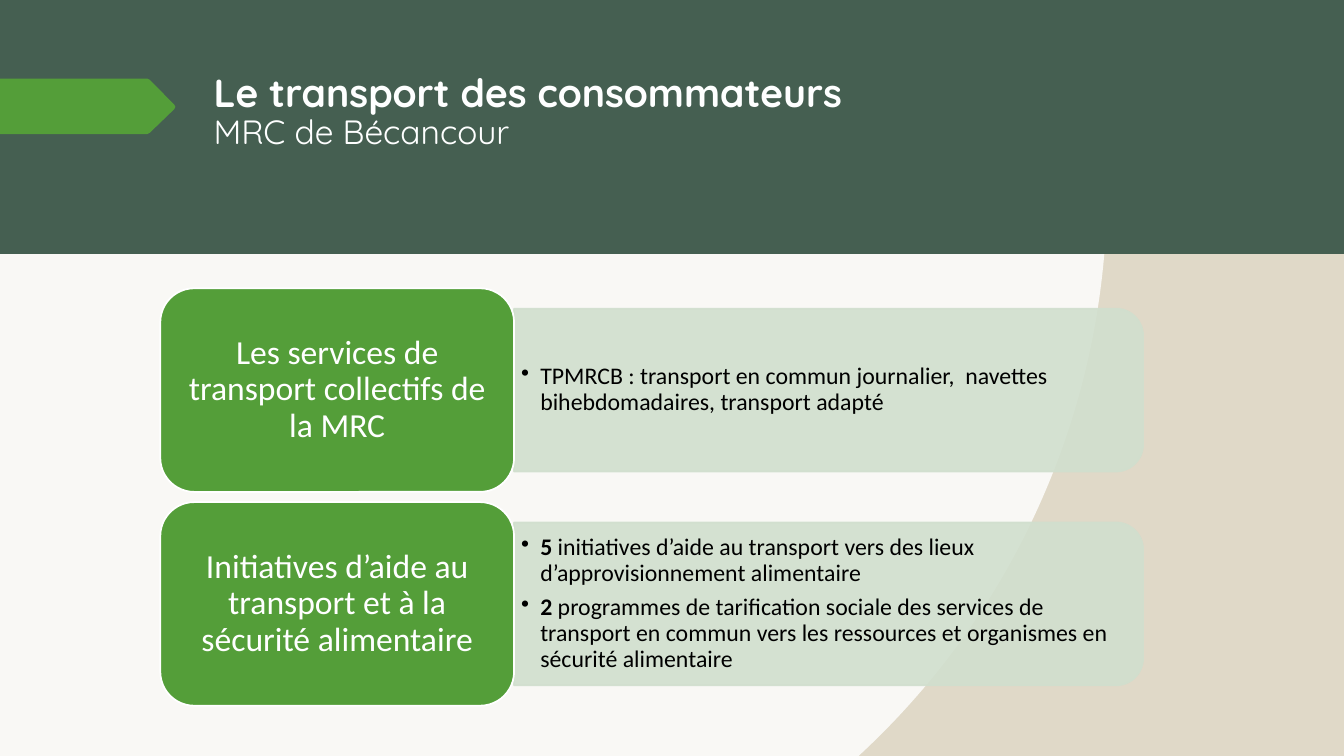
from dataclasses import dataclass

from pptx import Presentation
from pptx.dml.color import RGBColor
from pptx.enum.shapes import MSO_SHAPE
from pptx.enum.text import MSO_ANCHOR, PP_ALIGN
from pptx.oxml import parse_xml
from pptx.oxml.ns import nsdecls, qn
from pptx.oxml.xmlchemy import OxmlElement
from pptx.shapes.base import BaseShape
from pptx.slide import Slide
from pptx.text.text import TextFrame, _Paragraph, _Run
from pptx.util import Emu, Inches, Pt

COLORS = {
    "cream": "F9F8F5",
    "sand": "E0D9C8",
    "banner": "455F51",
    "green": "549E39",
    "panel": "D1DFCE",
    "title": "FEFFFF",
    "white": "FFFFFF",
    "black": "000000",
}

SLIDE_W, SLIDE_H = Inches(13.333), Inches(7.5)

# Rows: a label column and a panel column sharing the width
GRID_LEFT, GRID_TOP = Inches(1.59), Inches(2.86)
GRID_W = Inches(9.75)
LABEL_W = Emu(int(GRID_W * 0.36))
PANEL_W = Emu(GRID_W - LABEL_W)
ROW_H = Inches(2.02)
ROW_PITCH = Emu(int(ROW_H * 1.05))
PANEL_H = Emu(int(ROW_H * 0.8))

# Shares of the marker's own width and height
MARKER_OUTLINE = [
    (0, 0), (0.84, 0), (0.853, 0.02), (0.994, 0.47), (1, 0.51),
    (0.994, 0.55), (0.853, 0.98), (0.84, 1), (0, 1),
]


@dataclass
class Bullet:
    text: str
    lead: str = ""


@dataclass
class Row:
    label: str
    bullets: list[Bullet]


ROWS = [
    Row(
        "Les services de transport collectifs de la MRC",
        [Bullet("TPMRCB : transport en commun journalier,  navettes "
                "bihebdomadaires, transport adapté")],
    ),
    Row(
        "Initiatives d’aide au transport et à la sécurité alimentaire",
        [
            Bullet(" initiatives d’aide au transport vers des lieux "
                   "d’approvisionnement alimentaire", lead="5"),
            Bullet(" programmes de tarification sociale des services de transport "
                   "en commun vers les ressources et organismes en sécurité "
                   "alimentaire", lead="2"),
        ],
    ),
]


def rgb(name: str) -> RGBColor:
    return RGBColor.from_string(COLORS[name])


def set_background(slide: Slide) -> None:
    """Cream disc centred on the upper left quarter, sand around it."""
    bg = parse_xml(
        f'<p:bg {nsdecls("p", "a")}><p:bgPr><a:gradFill rotWithShape="1"><a:gsLst>'
        f'<a:gs pos="100000"><a:srgbClr val="{COLORS["cream"]}"/></a:gs>'
        f'<a:gs pos="100000"><a:srgbClr val="{COLORS["sand"]}"/></a:gs>'
        '</a:gsLst><a:path path="circle">'
        '<a:fillToRect l="50000" t="50000" r="100000" b="100000"/>'
        '</a:path></a:gradFill><a:effectLst/></p:bgPr></p:bg>'
    )
    slide.element.cSld.insert(0, bg)


def paint(sp: BaseShape, fill: str, line: str = "", opacity: int = 100) -> None:
    sp.shadow.inherit = False
    sp.fill.solid()
    sp.fill.fore_color.rgb = rgb(fill)
    if line:
        sp.line.color.rgb = rgb(line)
        sp.line.width = Pt(1.25)
    else:
        sp.line.fill.background()
    if opacity < 100:
        for color in sp.element.spPr.iter(qn("a:srgbClr")):
            alpha = OxmlElement("a:alpha")
            alpha.set("val", str(opacity * 1000))
            color.append(alpha)


def style(r: _Run, size: float, font: str, color: str, bold: bool = False) -> None:
    r.font.size = Pt(size)
    r.font.name = font
    r.font.color.rgb = rgb(color)
    r.font.bold = bold


def set_bullet(p: _Paragraph) -> None:
    pPr = p._p.get_or_add_pPr()
    pPr.set("marL", str(Inches(0.19)))
    pPr.set("indent", str(Inches(-0.19)))
    bullet = OxmlElement("a:buChar")
    bullet.set("char", "•")
    pPr.append(bullet)


def add_banner(slide: Slide) -> None:
    sp = slide.shapes.add_shape(
        MSO_SHAPE.RECTANGLE, 0, 0, SLIDE_W, int(SLIDE_H * 0.336))
    paint(sp, "banner")


def add_title(slide: Slide) -> None:
    box = slide.shapes.add_textbox(
        Inches(2.02), Inches(0.68), Inches(10.26), Inches(1.4))
    tf = box.text_frame
    tf.word_wrap = True
    p = tf.paragraphs[0]
    p.text = "Le transport des consommateurs\vMRC de Bécancour"
    p.line_spacing = 0.9
    heading, place = p.runs
    style(heading, 28, "Quicksand", "title", bold=True)
    style(place, 24, "Quicksand", "title")


def add_marker(slide: Slide) -> None:
    top, width, height = Inches(0.78), Inches(1.74), Inches(0.55)
    points = [(int(x * width), int(top + y * height)) for x, y in MARKER_OUTLINE]
    builder = slide.shapes.build_freeform(*points[0])
    builder.add_line_segments(points[1:], close=True)
    paint(builder.convert_to_shape(), "green")


def fill_bullets(tf: TextFrame, bullets: list[Bullet]) -> None:
    for i, bullet in enumerate(bullets):
        p = tf.paragraphs[0] if i == 0 else tf.add_paragraph()
        p.line_spacing = 0.9
        p.space_after = Pt(6)
        set_bullet(p)
        for text, bold in ((bullet.lead, True), (bullet.text, False)):
            if text:
                r = p.add_run()
                r.text = text
                style(r, 17, "Calibri", "black", bold)


def add_row(slide: Slide, row: Row, top: int) -> None:
    panel_left = GRID_LEFT + LABEL_W
    mid_x, mid_y = panel_left + PANEL_W // 2, top + ROW_H // 2

    # The panel stands upright before its quarter turn
    panel = slide.shapes.add_shape(
        MSO_SHAPE.ROUND_2_SAME_RECTANGLE,
        mid_x - PANEL_H // 2, mid_y - PANEL_W // 2, PANEL_H, PANEL_W)
    panel.rotation = 90
    paint(panel, "panel", line="panel", opacity=90)

    body_h = Inches(1.46)
    body = slide.shapes.add_textbox(
        panel_left, mid_y - body_h // 2, Inches(6.16), body_h)
    tf = body.text_frame
    tf.word_wrap = True
    tf.vertical_anchor = MSO_ANCHOR.MIDDLE
    tf.margin_left = tf.margin_right = Inches(0.07)
    tf.margin_top = tf.margin_bottom = Inches(0.04)
    fill_bullets(tf, row.bullets)

    label = slide.shapes.add_shape(
        MSO_SHAPE.ROUNDED_RECTANGLE, GRID_LEFT, top, LABEL_W, ROW_H)
    paint(label, "green", line="white")
    tf = label.text_frame
    tf.word_wrap = True
    tf.vertical_anchor = MSO_ANCHOR.MIDDLE
    p = tf.paragraphs[0]
    p.text = row.label
    p.alignment = PP_ALIGN.CENTER
    p.line_spacing = 0.9
    style(p.runs[0], 24, "Calibri", "white")


def main() -> None:
    prs = Presentation()
    prs.slide_width, prs.slide_height = SLIDE_W, SLIDE_H
    slide = prs.slides.add_slide(prs.slide_layouts[6])
    set_background(slide)
    add_banner(slide)
    add_title(slide)
    add_marker(slide)
    for i, row in enumerate(ROWS):
        add_row(slide, row, GRID_TOP + i * ROW_PITCH)
    prs.save("out.pptx")


if __name__ == "__main__":
    main()
